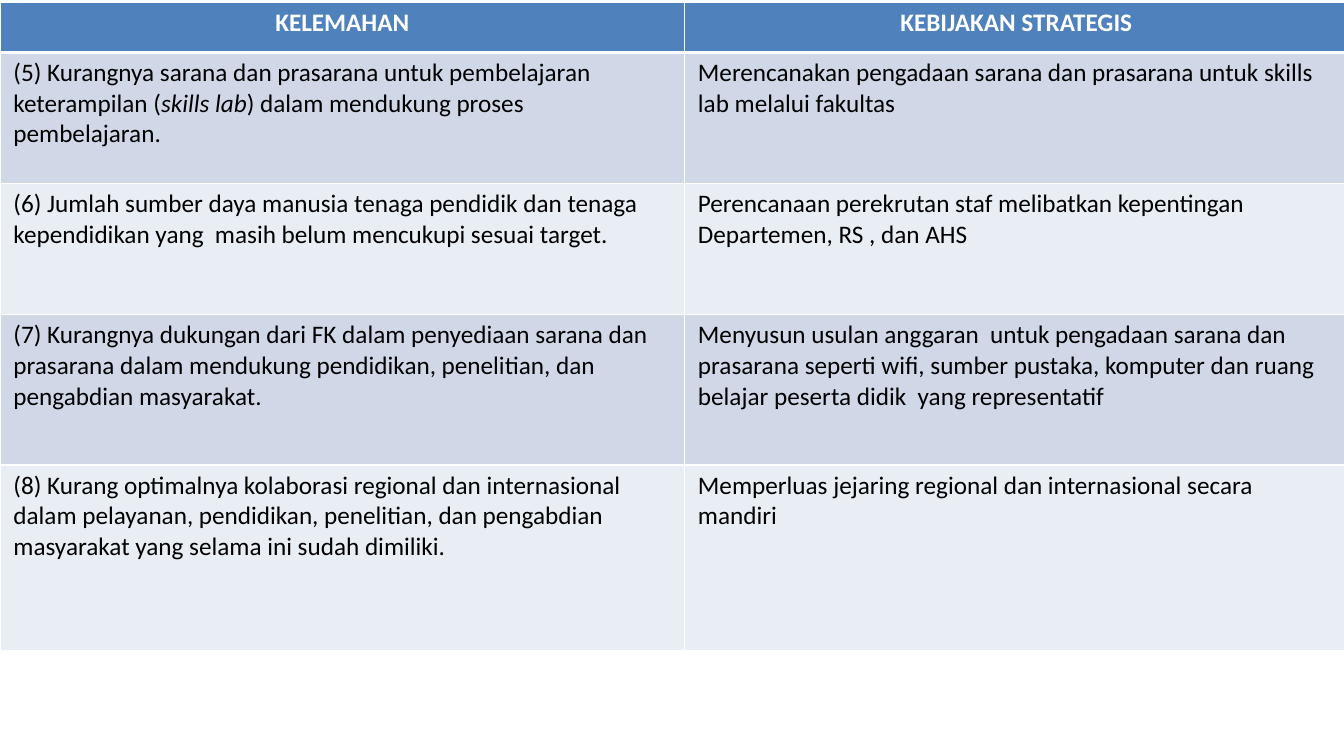
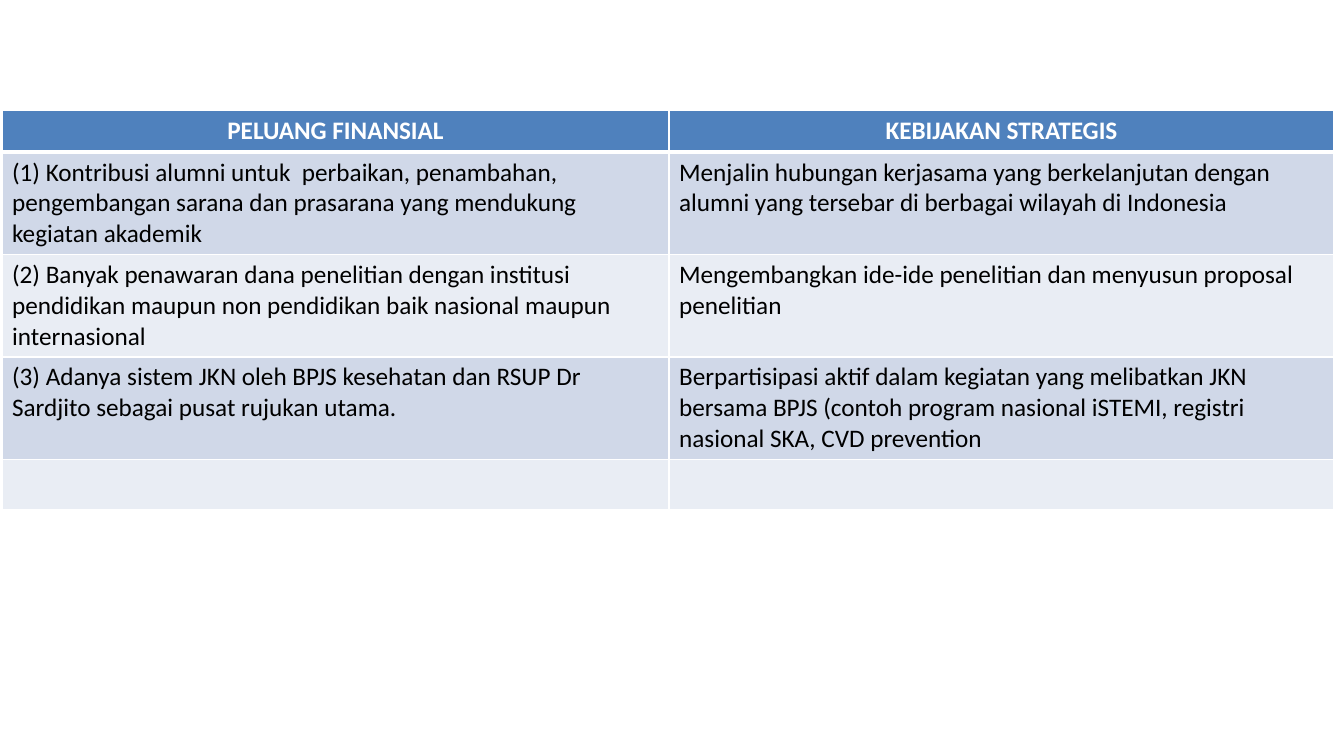
from dataclasses import dataclass

from lxml import etree
from pptx import Presentation
from pptx.dml.color import RGBColor
from pptx.enum.text import PP_ALIGN
from pptx.oxml.ns import qn
from pptx.table import _Cell
from pptx.util import Pt

CENTER, LEFT = PP_ALIGN.CENTER, PP_ALIGN.LEFT
BLANK_LAYOUT = 6


@dataclass(frozen=True)
class Theme:
    font: str = "Calibri"
    size: float = 18
    header_fill: str = "4F81BD"
    bands: tuple[str, str] = ("D0D8E8", "E9EDF4")
    header_text: str = "FFFFFF"
    body_text: str = "000000"
    border: str = "FFFFFF"
    thin: float = 1
    thick: float = 3


@dataclass(frozen=True)
class StrategyTable:
    """Lengths in points; text between asterisks is italic."""
    left: float
    top: float
    widths: tuple[float, ...]
    heights: tuple[float, ...]
    side_inset: float
    rows: tuple[tuple[str, str], ...]


THEME = Theme()
POLICY = "KEBIJAKAN STRATEGIS"

WEAKNESSES = StrategyTable(
    left=0, top=1.44, widths=(489, 474),
    heights=(36, 93.6, 93.6, 107.5, 132.5), side_inset=9.6,
    rows=(
        ("KELEMAHAN", POLICY),
        ("(5) Kurangnya sarana dan prasarana untuk pembelajaran keterampilan "
         "(*skills lab*) dalam mendukung proses pembelajaran.",
         "Merencanakan pengadaan sarana dan prasarana untuk skills lab "
         "melalui fakultas"),
        ("(6) Jumlah sumber daya manusia tenaga pendidik dan tenaga "
         "kependidikan yang  masih belum mencukupi sesuai target.",
         "Perencanaan perekrutan staf melibatkan kepentingan Departemen, "
         "RS , dan AHS"),
        ("(7) Kurangnya dukungan dari FK dalam penyediaan sarana dan "
         "prasarana dalam mendukung pendidikan, penelitian, dan pengabdian "
         "masyarakat.",
         "Menyusun usulan anggaran  untuk pengadaan sarana dan prasarana "
         "seperti wifi, sumber pustaka, komputer dan ruang belajar peserta "
         "didik  yang representatif"),
        ("(8) Kurang optimalnya kolaborasi regional dan internasional dalam "
         "pelayanan, pendidikan, penelitian, dan pengabdian masyarakat yang "
         "selama ini sudah dimiliki.",
         "Memperluas jejaring regional dan internasional secara mandiri"),
    ),
)

FINANCIAL_OPPORTUNITIES = StrategyTable(
    left=1.44, top=79.2, widths=(476.5, 475),
    heights=(29.5, 73, 73, 73, 36), side_inset=7.2,
    rows=(
        ("PELUANG FINANSIAL", POLICY),
        ("(1) Kontribusi alumni untuk  perbaikan, penambahan, pengembangan "
         "sarana dan prasarana yang mendukung kegiatan akademik",
         "Menjalin hubungan kerjasama yang berkelanjutan dengan alumni yang "
         "tersebar di berbagai wilayah di Indonesia"),
        ("(2) Banyak penawaran dana penelitian dengan institusi pendidikan "
         "maupun non pendidikan baik nasional maupun internasional",
         "Mengembangkan ide-ide penelitian dan menyusun proposal penelitian"),
        ("(3) Adanya sistem JKN oleh BPJS kesehatan dan RSUP Dr Sardjito "
         "sebagai pusat rujukan utama.",
         "Berpartisipasi aktif dalam kegiatan yang melibatkan JKN bersama "
         "BPJS (contoh program nasional iSTEMI, registri nasional SKA, CVD "
         "prevention"),
        ("", ""),
    ),
)


def set_borders(cell: _Cell, top: float, bottom: float) -> None:
    properties = cell._tc.get_or_add_tcPr()
    widths = {"L": THEME.thin, "R": THEME.thin, "T": top, "B": bottom}
    for side, width in widths.items():
        line = etree.SubElement(properties, qn(f"a:ln{side}"), w=str(Pt(width)))
        fill = etree.SubElement(line, qn("a:solidFill"))
        etree.SubElement(fill, qn("a:srgbClr"), val=THEME.border)


def write_text(cell: _Cell, text: str, is_header: bool) -> None:
    paragraph = cell.text_frame.paragraphs[0]
    paragraph.alignment = CENTER if is_header else LEFT
    color = THEME.header_text if is_header else THEME.body_text
    for index, part in enumerate(text.split("*") if text else ()):
        run = paragraph.add_run()
        run.text = part
        run.font.name = THEME.font
        run.font.size = Pt(THEME.size)
        run.font.bold = is_header
        run.font.italic = index % 2 == 1
        run.font.color.rgb = RGBColor.from_string(color)


def style_cell(cell: _Cell, row: int, side_inset: float) -> None:
    cell.margin_left = cell.margin_right = Pt(side_inset)
    cell.margin_top = cell.margin_bottom = Pt(3.6)
    set_borders(cell,
                top=THEME.thick if row == 1 else THEME.thin,
                bottom=THEME.thick if row == 0 else THEME.thin)
    fill = THEME.bands[(row - 1) % 2] if row else THEME.header_fill
    cell.fill.solid()
    cell.fill.fore_color.rgb = RGBColor.from_string(fill)


def add_strategy_slide(deck: Presentation, content: StrategyTable) -> None:
    slide = deck.slides.add_slide(deck.slide_layouts[BLANK_LAYOUT])
    table = slide.shapes.add_table(
        len(content.rows), len(content.widths),
        Pt(content.left), Pt(content.top),
        Pt(sum(content.widths)), Pt(sum(content.heights))).table
    for column, width in zip(table.columns, content.widths):
        column.width = Pt(width)
    for row, (texts, height) in enumerate(zip(content.rows, content.heights)):
        table.rows[row].height = Pt(height)
        for column, text in enumerate(texts):
            cell = table.cell(row, column)
            style_cell(cell, row, content.side_inset)
            write_text(cell, text, is_header=row == 0)


def main() -> None:
    deck = Presentation()
    deck.slide_width, deck.slide_height = Pt(960), Pt(540)
    for content in (WEAKNESSES, FINANCIAL_OPPORTUNITIES):
        add_strategy_slide(deck, content)
    deck.save("out.pptx")


if __name__ == "__main__":
    main()
